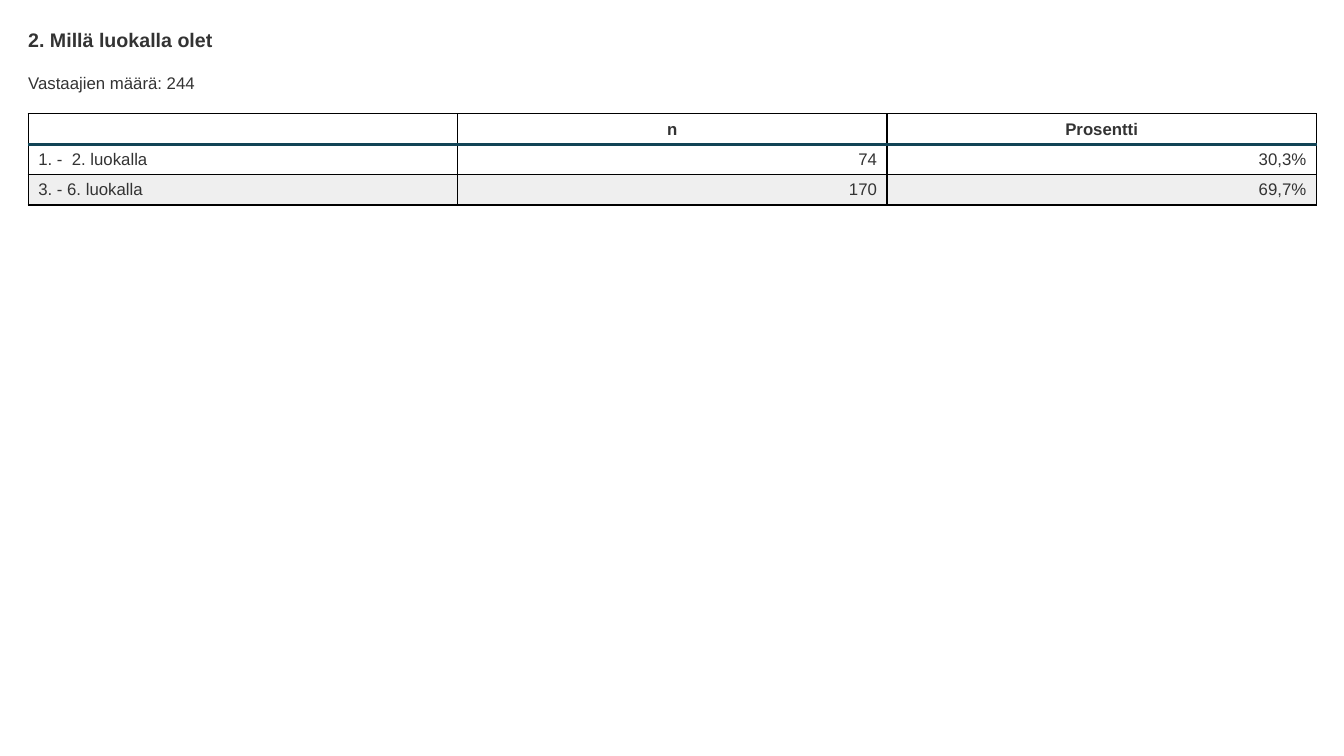
from dataclasses import dataclass

from lxml import etree
from pptx import Presentation
from pptx.dml.color import RGBColor
from pptx.enum.text import MSO_ANCHOR, MSO_AUTO_SIZE, PP_ALIGN
from pptx.oxml.ns import qn
from pptx.util import Pt

LEFT, CENTER, RIGHT = PP_ALIGN.LEFT, PP_ALIGN.CENTER, PP_ALIGN.RIGHT
TOP, MIDDLE = MSO_ANCHOR.TOP, MSO_ANCHOR.MIDDLE
NO_FIT = MSO_AUTO_SIZE.NONE


@dataclass(frozen=True)
class Theme:
    font: str = "Arial"
    head: int = 14
    body: int = 12
    ink: str = "333333"
    paper: str = "FFFFFF"
    band: str = "EFEFEF"
    grid: str = "000000"
    rule: str = "124456"


THEME = Theme()
EDGE, WIDTH = 20.16, 920.16
ROW = 21.6
ROWS = [
    ("", "n", "Prosentti"),
    ("1. -  2. luokalla", "74", "30,3%"),
    ("3. - 6. luokalla", "170", "69,7%"),
]


def write(frame, text, size, bold=False, align=LEFT):
    """Set one paragraph and format its runs."""
    frame.text = text
    para = frame.paragraphs[0]
    para.alignment = align
    for run in para.runs:
        font = run.font
        font.name, font.size, font.bold = THEME.font, Pt(size), bold
        font.color.rgb = RGBColor.from_string(THEME.ink)
    if not text:  # an empty cell keeps the row's type size
        end = etree.SubElement(para._p, qn("a:endParaRPr"))
        end.set("sz", str(size * 100))


def place(shape, top, height):
    """Put a text shape on the left edge, without insets."""
    shape.left, shape.top = Pt(EDGE), Pt(top)
    shape.width, shape.height = Pt(WIDTH), Pt(height)
    frame = shape.text_frame
    frame.margin_left = frame.margin_right = 0
    frame.margin_top = frame.margin_bottom = 0
    frame.word_wrap, frame.auto_size = True, NO_FIT
    frame.vertical_anchor = TOP
    return frame


def border(cell, side, color, width):
    line = etree.SubElement(cell._tc.get_or_add_tcPr(), qn(f"a:ln{side}"))
    line.set("w", str(Pt(width)))
    fill = etree.SubElement(line, qn("a:solidFill"))
    etree.SubElement(fill, qn("a:srgbClr")).set("val", color)


def style(cell, row):
    """Draw the grid, the rule under the header and the row fill."""
    ruled = {0: "B", 1: "T"}.get(row)
    for side in "LRTB":
        if side == ruled:
            border(cell, side, THEME.rule, 2)
        else:
            border(cell, side, THEME.grid, 1)
    cell.fill.solid()
    color = THEME.band if row == 2 else THEME.paper
    cell.fill.fore_color.rgb = RGBColor.from_string(color)
    cell.vertical_anchor = MIDDLE


def add_grid(slide, top):
    count = len(ROWS[0])
    table = slide.shapes.add_table(
        len(ROWS), count, Pt(EDGE), Pt(top), Pt(WIDTH), Pt(ROW * len(ROWS))
    ).table
    table.horz_banding = False
    for col in table.columns:
        col.width = Pt(WIDTH / count)
    for r, texts in enumerate(ROWS):
        table.rows[r].height = Pt(ROW)
        for c, text in enumerate(texts):
            cell = table.cell(r, c)
            align = CENTER if r == 0 else RIGHT if c else LEFT
            write(cell.text_frame, text, THEME.body, r == 0, align)
            style(cell, r)


def main():
    deck = Presentation()
    deck.slide_width, deck.slide_height = Pt(960), Pt(540)
    slide = deck.slides.add_slide(deck.slide_layouts[5])

    # Question
    title = place(slide.shapes.title, 20.16, 16.56)
    write(title, "2. Millä luokalla olet", THEME.head, True)

    # Number of answers
    box = slide.shapes.add_textbox(0, 0, 0, 0)
    write(place(box, 51.84, 14.4), "Vastaajien määrä: 244", THEME.body)

    # Answers by grade
    add_grid(slide, 81.36)
    deck.save("out.pptx")


if __name__ == "__main__":
    main()
